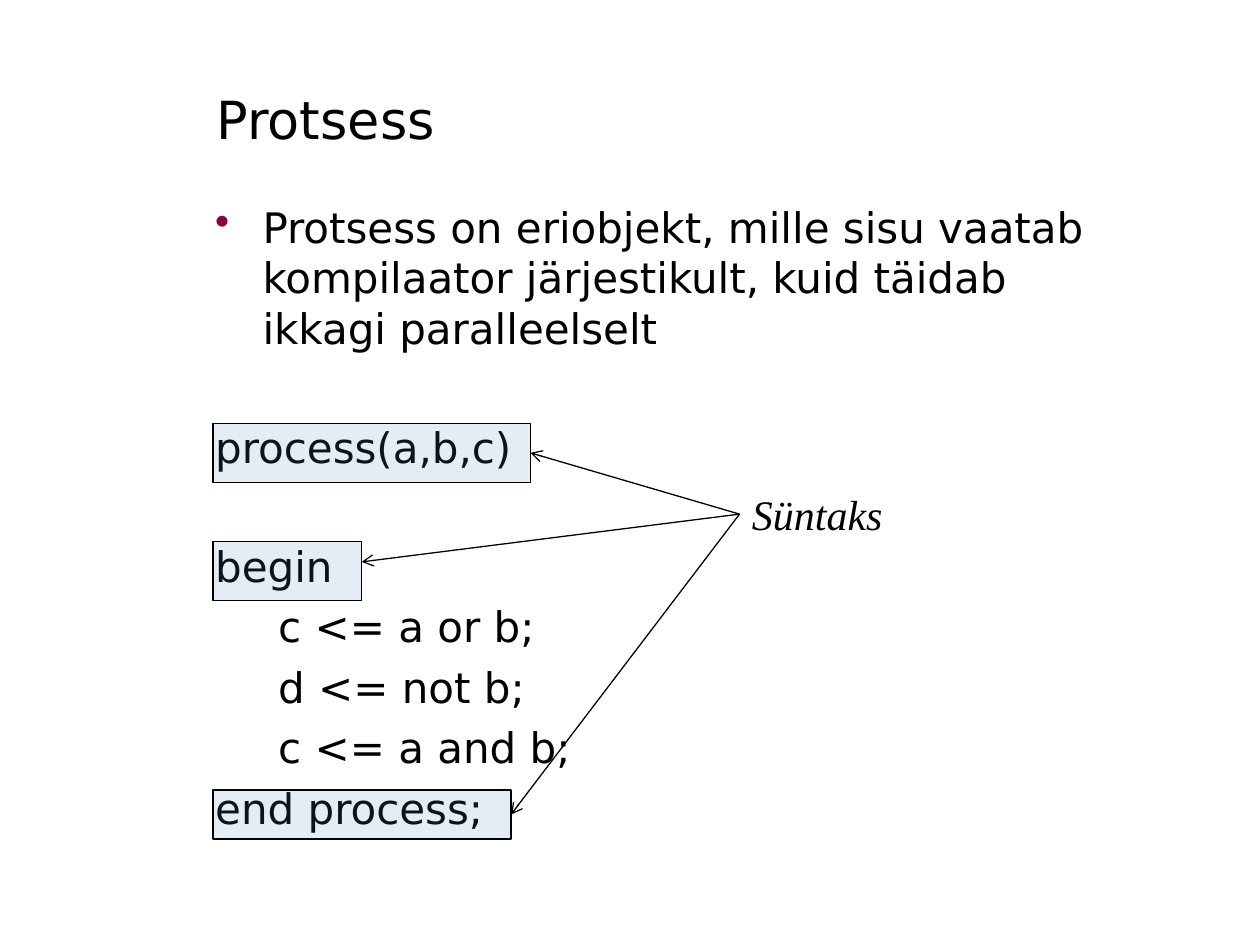
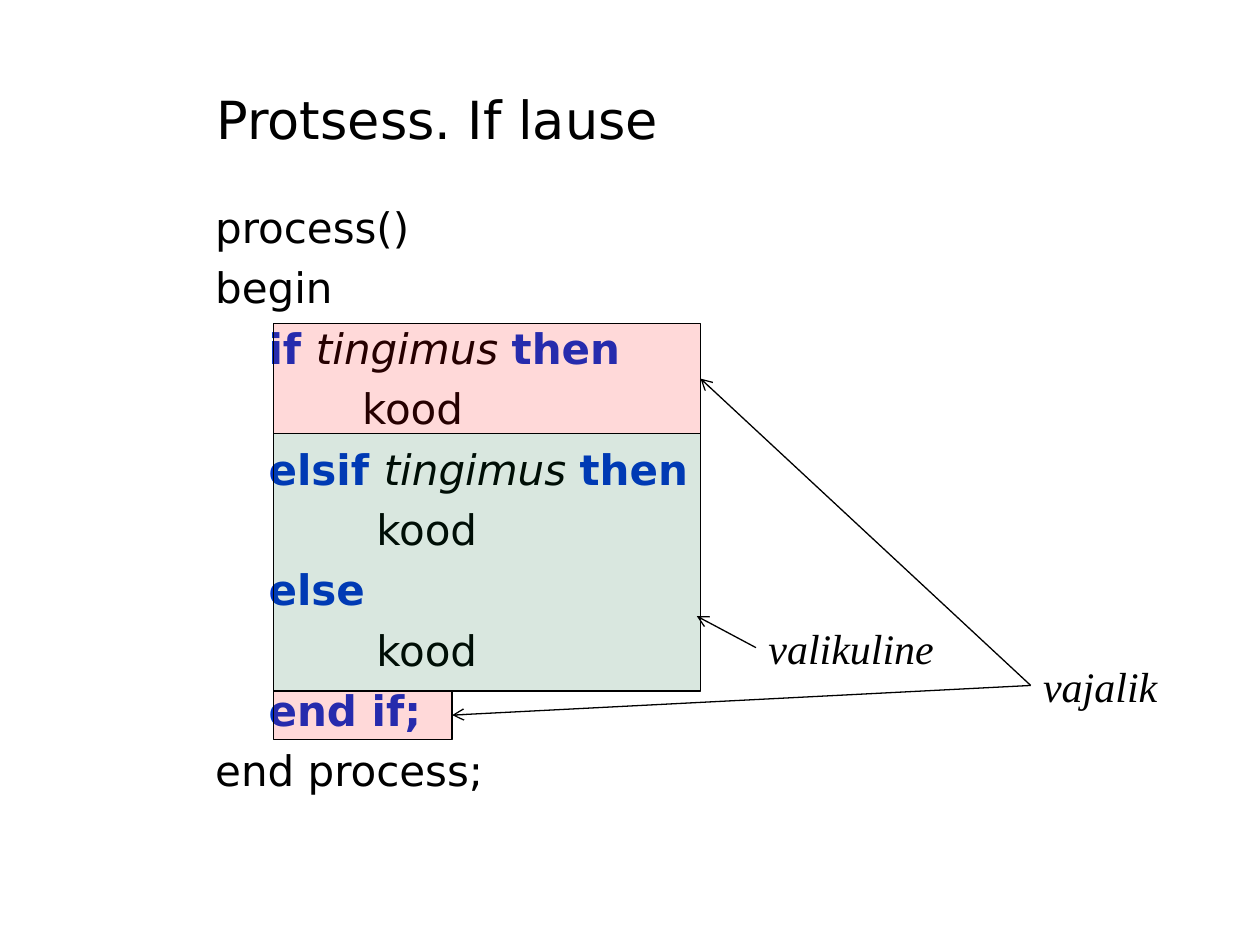
from dataclasses import dataclass
from typing import Optional

from lxml import etree
from pptx import Presentation
from pptx.dml.color import RGBColor
from pptx.enum import shapes, text
from pptx.oxml.ns import qn
from pptx.util import Pt

# Shared look
BLACK = RGBColor(0x00, 0x00, 0x00)
KEYWORD_BLUE = RGBColor(0x00, 0x33, 0xCC)
BULLET_PLUM = RGBColor(0x87, 0x00, 0x42)
SYNTAX_BLUE = RGBColor(0x4F, 0x81, 0xBD)
REQUIRED_RED = RGBColor(0xFF, 0x00, 0x00)
OPTIONAL_GREEN = RGBColor(0x00, 0x64, 0x2D)
MAIN_FONT = "DejaVu Sans"
LABEL_FONT = "Times New Roman"
TITLE_SIZE, TEXT_SIZE = 30, 24
LINE_WIDTH = 0.75
OPACITY = 15  # percent
LABEL_HEIGHT = 36
TITLE_AREA = (116.6, 33.8, 535.7, 67.7)
BODY_AREA = (115.9, 111.6, 538.6, 380.9)
PARAGRAPH_GAP = 5.7
SECTION_GAP = 39.3  # one free line between code parts
TITLE_ONLY_LAYOUT = 5


@dataclass(frozen=True)
class Run:
    text: str
    color: RGBColor = BLACK
    bold: bool = False
    italic: bool = False


@dataclass(frozen=True)
class Line:
    runs: tuple[Run, ...]
    indent: float = 0
    gap: float = PARAGRAPH_GAP
    bullet: bool = False


@dataclass(frozen=True)
class Highlight:
    left: float
    top: float
    width: float
    height: float
    color: RGBColor
    tip: Optional[tuple[float, float]] = None

    @property
    def arrow_tip(self) -> tuple[float, float]:
        """Arrows end in the middle of the right edge unless a tip is given."""
        return self.tip or (self.left + self.width, self.top + self.height / 2)


@dataclass(frozen=True)
class Label:
    text: str
    left: float
    top: float
    width: float
    targets: tuple[Highlight, ...]


def plain(words: str, indent: float = 0, gap: float = PARAGRAPH_GAP) -> Line:
    return Line((Run(words),), indent, gap)


def keyword(words: str) -> Run:
    return Run(words, color=KEYWORD_BLUE, bold=True)


def condition(opening: str, indent: float) -> Line:
    runs = (keyword(opening + " "), Run("tingimus ", italic=True), keyword("then"))
    return Line(runs, indent)


def add_run(paragraph, words: str, *, font: str = MAIN_FONT, size: float = TEXT_SIZE,
            color: RGBColor = BLACK, bold: bool = False, italic: bool = False) -> None:
    run = paragraph.add_run()
    run.text = words
    run.font.name = font
    run.font.size = Pt(size)
    run.font.color.rgb = color
    run.font.bold = bold
    run.font.italic = italic


def set_indent(paragraph, line: Line) -> None:
    properties = paragraph._p.get_or_add_pPr()
    properties.set("marL", str(Pt(line.indent)))
    properties.set("indent", str(Pt(-line.indent if line.bullet else 0)))
    if line.bullet:
        color = etree.SubElement(properties, qn("a:buClr"))
        etree.SubElement(color, qn("a:srgbClr"), val=str(BULLET_PLUM))
        etree.SubElement(properties, qn("a:buChar"), char="•")


def add_text_box(slide, left: float, top: float, width: float, height: float):
    box = slide.shapes.add_textbox(Pt(left), Pt(top), Pt(width), Pt(height))
    box.text_frame.word_wrap = True
    return box.text_frame


def add_title(slide, words: str) -> None:
    title = slide.shapes.title
    title.left, title.top, title.width, title.height = map(Pt, TITLE_AREA)
    title.text_frame.vertical_anchor = text.MSO_ANCHOR.MIDDLE
    paragraph = title.text_frame.paragraphs[0]
    paragraph.alignment = text.PP_ALIGN.LEFT
    add_run(paragraph, words, size=TITLE_SIZE)


def add_body(slide, lines: list[Line]) -> None:
    frame = add_text_box(slide, *BODY_AREA)
    for index, line in enumerate(lines):
        paragraph = frame.add_paragraph() if index else frame.paragraphs[0]
        set_indent(paragraph, line)
        if index:
            paragraph.space_before = Pt(line.gap)
        for run in line.runs:
            add_run(paragraph, run.text, color=run.color, bold=run.bold, italic=run.italic)


def add_highlight(slide, area: Highlight) -> None:
    shape = slide.shapes.add_shape(shapes.MSO_SHAPE.RECTANGLE, Pt(area.left), Pt(area.top),
                                   Pt(area.width), Pt(area.height))
    shape.shadow.inherit = False
    shape.fill.solid()
    shape.fill.fore_color.rgb = area.color
    color = shape._element.spPr.find(qn("a:solidFill")).find(qn("a:srgbClr"))
    etree.SubElement(color, qn("a:alpha"), val=str(OPACITY * 1000))
    shape.line.color.rgb = BLACK
    shape.line.width = Pt(LINE_WIDTH)


def add_arrow(slide, start: tuple[float, float], end: tuple[float, float]) -> None:
    arrow = slide.shapes.add_connector(shapes.MSO_CONNECTOR.STRAIGHT,
                                       *map(Pt, start), *map(Pt, end))
    arrow.line.color.rgb = BLACK
    arrow.line.width = Pt(LINE_WIDTH)
    etree.SubElement(arrow.line._get_or_add_ln(), qn("a:tailEnd"), type="arrow")
    etree.SubElement(arrow._element.spPr, qn("a:effectLst"))


def add_label(slide, label: Label) -> None:
    frame = add_text_box(slide, label.left, label.top, label.width, LABEL_HEIGHT)
    add_run(frame.paragraphs[0], label.text, font=LABEL_FONT, italic=True)
    for target in label.targets:
        add_arrow(slide, (label.left, label.top + LABEL_HEIGHT / 2), target.arrow_tip)


def add_code_slide(presentation, title: str, lines: list[Line],
                   highlights: tuple[Highlight, ...], labels: list[Label]) -> None:
    slide = presentation.slides.add_slide(presentation.slide_layouts[TITLE_ONLY_LAYOUT])
    add_title(slide, title)
    add_body(slide, lines)
    for highlight in highlights:
        add_highlight(slide, highlight)
    for label in labels:
        add_label(slide, label)


def add_process_slide(presentation) -> None:
    definition = Run("Protsess on eriobjekt, mille sisu vaatab kompilaator "
                     "järjestikult, kuid täidab ikkagi paralleelselt")
    statements = ("c <= a or b;", "d <= not b;", "c <= a and b;")
    lines = [
        Line((definition,), indent=27, bullet=True),
        plain("process(a,b,c)", gap=SECTION_GAP),
        plain("begin", gap=SECTION_GAP),
        *(plain(statement, indent=36) for statement in statements),
        plain("end process;"),
    ]
    syntax = (
        Highlight(121.7, 241.9, 181.4, 33.8, SYNTAX_BLUE),
        Highlight(121.7, 309.6, 85, 33.8, SYNTAX_BLUE, tip=(206.7, 321.1)),
        Highlight(121.7, 451.4, 170.3, 28.1, SYNTAX_BLUE),
    )
    add_code_slide(presentation, "Protsess", lines, syntax,
                   [Label("Süntaks", 422.6, 275.8, 232.6, syntax)])


def add_if_slide(presentation) -> None:
    branch, required_code, optional_code = 30.5, 84, 92  # indents
    lines = [
        plain("process()"),
        plain("begin"),
        condition("if", branch),
        plain("kood", required_code),
        condition("elsif", branch),
        plain("kood", optional_code),
        Line((keyword("else"),), branch),
        plain("kood", optional_code),
        Line((keyword("end if;"),), branch),
        plain("end process;"),
    ]
    if_part = Highlight(156.2, 185, 244.1, 62.7, REQUIRED_RED)
    end_part = Highlight(156.2, 394.6, 102.2, 28.1, REQUIRED_RED)
    else_part = Highlight(156.2, 247.7, 244.1, 147.2, OPTIONAL_GREEN, tip=(398.2, 352.1))
    add_code_slide(presentation, "Protsess. If lause", lines,
                   (if_part, end_part, else_part),
                   [Label("vajalik", 589, 373.7, 90.7, (if_part, end_part)),
                    Label("valikuline", 432, 352.1, 118.8, (else_part,))])


def main() -> None:
    presentation = Presentation()
    presentation.slide_width, presentation.slide_height = Pt(720), Pt(540)
    add_process_slide(presentation)
    add_if_slide(presentation)
    presentation.save("out.pptx")


if __name__ == "__main__":
    main()
